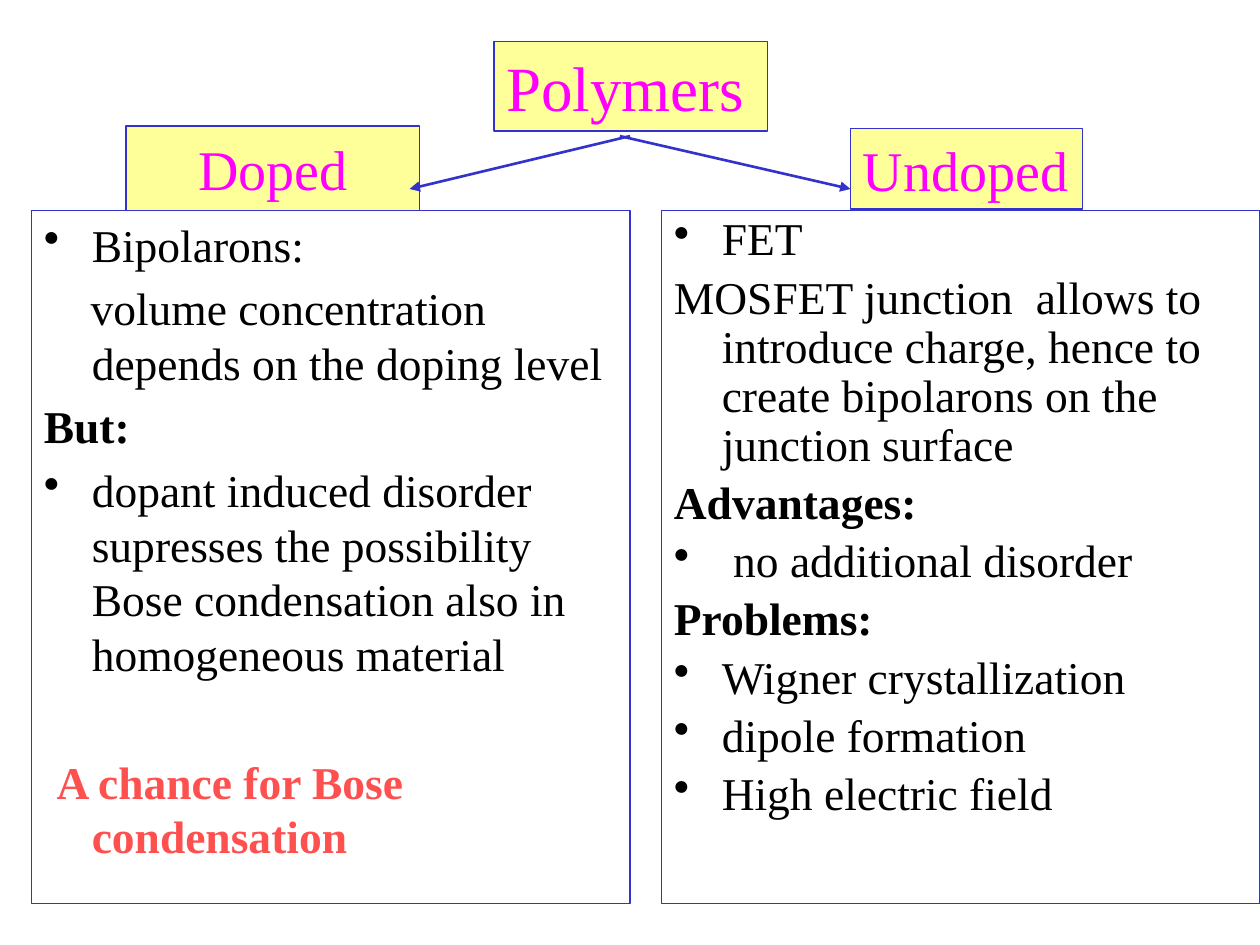
from dataclasses import dataclass

from lxml.etree import SubElement
from pptx import Presentation
from pptx.dml.color import RGBColor
from pptx.enum.shapes import MSO_CONNECTOR, MSO_SHAPE
from pptx.enum.text import MSO_ANCHOR, PP_ALIGN
from pptx.oxml.ns import qn
from pptx.util import Inches, Pt


@dataclass(frozen=True)
class Theme:
    font: str = "Times New Roman"
    label_fill: RGBColor = RGBColor(0xFF, 0xFF, 0x99)
    label_text: RGBColor = RGBColor(0xFF, 0x00, 0xFF)
    outline: RGBColor = RGBColor(0x33, 0x33, 0xCC)
    body_text: RGBColor = RGBColor(0x00, 0x00, 0x00)
    highlight: RGBColor = RGBColor(0xFF, 0x50, 0x50)
    root_size: int = 36
    branch_size: int = 32
    body_size: int = 26


theme = Theme()


def add_box(left, top, width, height, fill=None):
    shape = slide.shapes.add_shape(
        MSO_SHAPE.RECTANGLE, Inches(left), Inches(top), Inches(width), Inches(height))
    shape.shadow.inherit = False
    if fill is None:
        shape.fill.background()
    else:
        shape.fill.solid()
        shape.fill.fore_color.rgb = fill
    shape.line.color.rgb = theme.outline
    shape.line.width = Pt(0.75)
    return shape


def format_text(paragraph, size, color, bold=False):
    for run in paragraph.runs:
        run.font.name = theme.font
        run.font.size = Pt(size)
        run.font.color.rgb = color
        run.font.bold = bold


presentation = Presentation()
presentation.slide_width = Inches(10)
presentation.slide_height = Inches(7.5)
slide = presentation.slides.add_slide(presentation.slide_layouts[6])

# Text columns: (text, style) for each paragraph
doped_points = [
    ("Bipolarons:", "bullet"),
    ("volume concentration depends on the doping level", "block"),
    ("But:", "heading"),
    ("dopant induced disorder supresses the possibility Bose condensation "
     "also in homogeneous material", "bullet"),
    ("A chance for Bose condensation", "conclusion"),
]
undoped_points = [
    ("FET", "bullet"),
    ("MOSFET junction  allows to introduce charge, hence to create bipolarons "
     "on the junction surface", "hanging"),
    ("Advantages:", "heading"),
    (" no additional disorder", "bullet"),
    ("Problems:", "heading"),
    ("Wigner crystallization", "bullet"),
    ("dipole formation", "bullet"),
    ("High electric field", "bullet"),
]
first_line_indents = {"block": -0.01, "conclusion": -0.28}

for left, points, line_spacing in [(0.25, doped_points, 1.0), (5.25, undoped_points, 0.9)]:
    column = add_box(left, 1.67, 4.75, 5.5)
    text_frame = column.text_frame
    text_frame.word_wrap = True
    text_frame.vertical_anchor = MSO_ANCHOR.TOP
    for index, (text, style) in enumerate(points):
        paragraph = text_frame.paragraphs[0] if index == 0 else text_frame.add_paragraph()
        paragraph.text = text
        paragraph.alignment = PP_ALIGN.LEFT
        paragraph.line_spacing = line_spacing
        paragraph.space_before = Pt(42 if style == "conclusion" else 5.2)
        color = theme.highlight if style == "conclusion" else theme.body_text
        format_text(paragraph, theme.body_size, color, style in ("heading", "conclusion"))
        properties = paragraph._p.get_or_add_pPr()
        properties.set("marL", str(Inches(0.38)))
        properties.set("indent", str(Inches(first_line_indents.get(style, -0.38))))
        if style == "bullet":
            SubElement(properties, qn("a:buChar")).set("char", "•")
        else:
            SubElement(properties, qn("a:buNone"))

# Yellow labels
labels = [
    ("Doped", 1, 1, 2.33, 0.67, theme.branch_size, PP_ALIGN.CENTER, True),
    ("Undoped", 6.75, 1.02, 1.84, 0.64, theme.branch_size, PP_ALIGN.LEFT, False),
    ("Polymers", 3.92, 0.33, 2.17, 0.71, theme.root_size, PP_ALIGN.LEFT, True),
]
for text, left, top, width, height, size, alignment, wrap in labels:
    label = add_box(left, top, width, height, theme.label_fill)
    label.text_frame.text = text
    label.text_frame.word_wrap = wrap
    label.text_frame.vertical_anchor = MSO_ANCHOR.MIDDLE
    paragraph = label.text_frame.paragraphs[0]
    paragraph.alignment = alignment
    format_text(paragraph, size, theme.label_text)

# Arrows from the root to its two branches
for start_x, end_x in [(5, 3.25), (4.92, 6.75)]:
    arrow = slide.shapes.add_connector(
        MSO_CONNECTOR.STRAIGHT, Inches(start_x), Inches(1.08), Inches(end_x), Inches(1.5))
    arrow.line.color.rgb = theme.outline
    arrow.line.width = Pt(1.5)
    SubElement(arrow.line._get_or_add_ln(), qn("a:tailEnd")).set("type", "triangle")
    SubElement(arrow._element.spPr, qn("a:effectLst"))

presentation.save("out.pptx")
